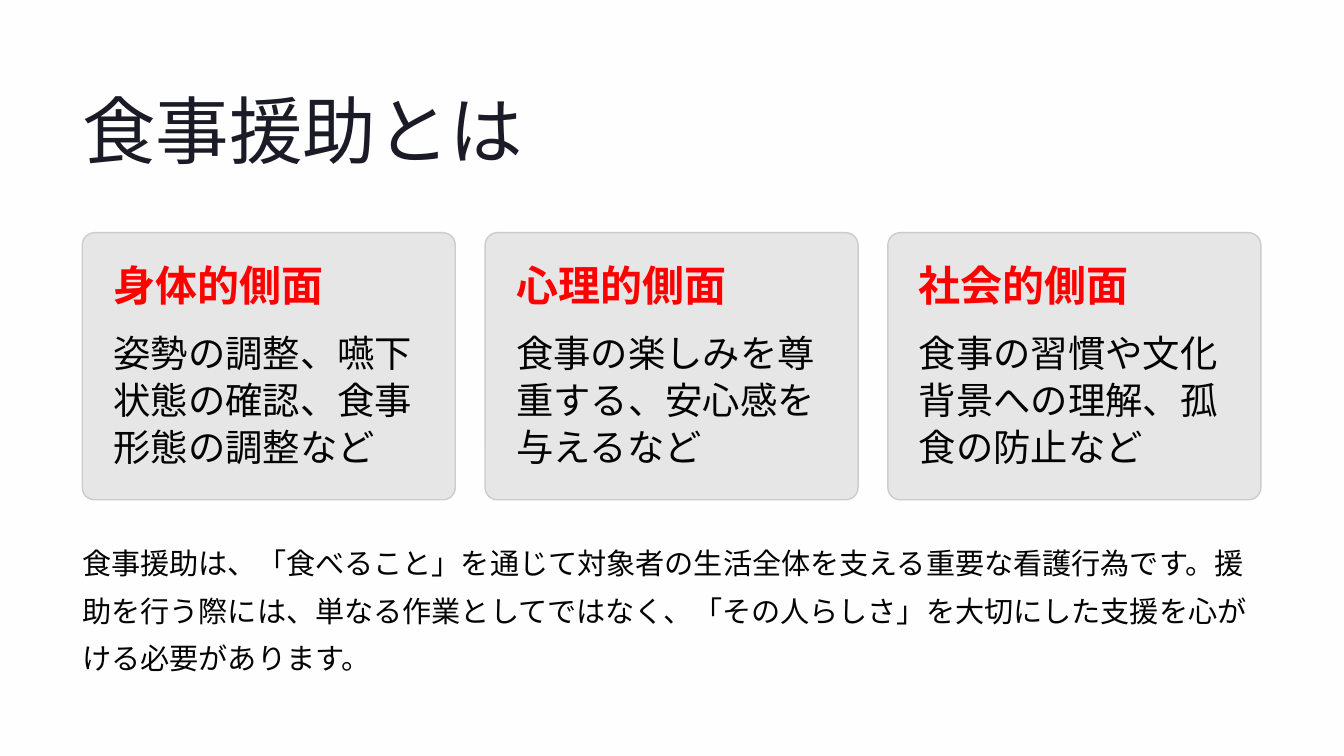
from dataclasses import dataclass

from lxml import etree
from pptx import Presentation
from pptx.dml.color import RGBColor
from pptx.enum import lang, shapes, text
from pptx.oxml import ns
from pptx.slide import Slide
from pptx.util import Inches, Pt

LEFT, CONTENT_W = 0.98, 14.03
CARD_TOP, CARD_W, CARD_H, PAD = 2.77, 4.44, 3.18, 0.37


@dataclass(frozen=True)
class Style:
    font: str
    size: float
    color: str
    leading: float
    bold: bool = False
    wrap: bool = True


@dataclass(frozen=True)
class Card:
    heading: str
    body: str


TITLE = Style("Inter", 63, "1B1B27", 79, wrap=False)
HEADING = Style("Inter", 36, "FF0000", 39.5, bold=True, wrap=False)
CARD_BODY = Style("Lato", 32, "030303", 40.5)
SUMMARY = Style("Lato", 25, "030303", 40.5)

CARDS = [
    Card("身体的側面", "姿勢の調整、嚥下状態の確認、食事形態の調整など"),
    Card("心理的側面", "食事の楽しみを尊重する、安心感を与えるなど"),
    Card("社会的側面", "食事の習慣や文化背景への理解、孤食の防止など"),
]


def rgb(color: str) -> RGBColor:
    return RGBColor.from_string(color)


def add_text(s: Slide, content: str, style: Style,
             x: float, y: float, w: float, h: float) -> None:
    tf = s.shapes.add_textbox(Inches(x), Inches(y), Inches(w), Inches(h)).text_frame
    tf.margin_left = tf.margin_top = tf.margin_right = tf.margin_bottom = 0
    tf.word_wrap = style.wrap
    tf.vertical_anchor = text.MSO_ANCHOR.TOP
    tf.text = content
    p = tf.paragraphs[0]
    p.alignment = text.PP_ALIGN.LEFT
    p.line_spacing = Pt(style.leading)
    r = p.runs[0]
    r.font.name = style.font
    r.font.size = Pt(style.size)
    r.font.bold = style.bold
    r.font.color.rgb = rgb(style.color)
    r.font.language_id = lang.MSO_LANGUAGE_ID.JAPANESE
    # East Asian typeface
    ea = etree.SubElement(r.font._element, ns.qn("a:ea"))
    ea.set("typeface", style.font)


def add_card(s: Slide, card: Card, x: float) -> None:
    sp = s.shapes.add_shape(shapes.MSO_SHAPE.ROUNDED_RECTANGLE, Inches(x),
                            Inches(CARD_TOP), Inches(CARD_W), Inches(CARD_H))
    sp.adjustments[0] = 0.046
    sp.shadow.inherit = False
    sp.fill.solid()
    sp.fill.fore_color.rgb = rgb("E6E6E6")
    sp.line.color.rgb = rgb("CCCCCC")
    sp.line.width = Pt(1.2)
    inner_w = CARD_W - 2 * PAD
    add_text(s, card.heading, HEADING, x + PAD, CARD_TOP + PAD, inner_w, 0.55)
    add_text(s, card.body, CARD_BODY, x + PAD, 3.9, inner_w, 1.69)


def main() -> None:
    prs = Presentation()
    prs.slide_width, prs.slide_height = Inches(16), Inches(9)
    s = prs.slides.add_slide(prs.slide_layouts[6])

    # Background
    s.background.fill.solid()
    s.background.fill.fore_color.rgb = rgb("FEFEFE")

    # Title
    add_text(s, "食事援助とは", TITLE, LEFT, 0.97, 8.79, 1.1)

    # Three cards spread evenly over the content width
    pitch = (CONTENT_W - CARD_W) / (len(CARDS) - 1)
    for i, card in enumerate(CARDS):
        add_card(s, card, LEFT + i * pitch)

    # Summary
    add_text(s, "食事援助は、「食べること」を通じて対象者の生活全体を支える重要な看護行為です。"
                "援助を行う際には、単なる作業としてではなく、「その人らしさ」を大切にした支援を"
                "心がける必要があります。", SUMMARY, LEFT, 6.35, CONTENT_W, 1.69)

    prs.save("out.pptx")


if __name__ == "__main__":
    main()
